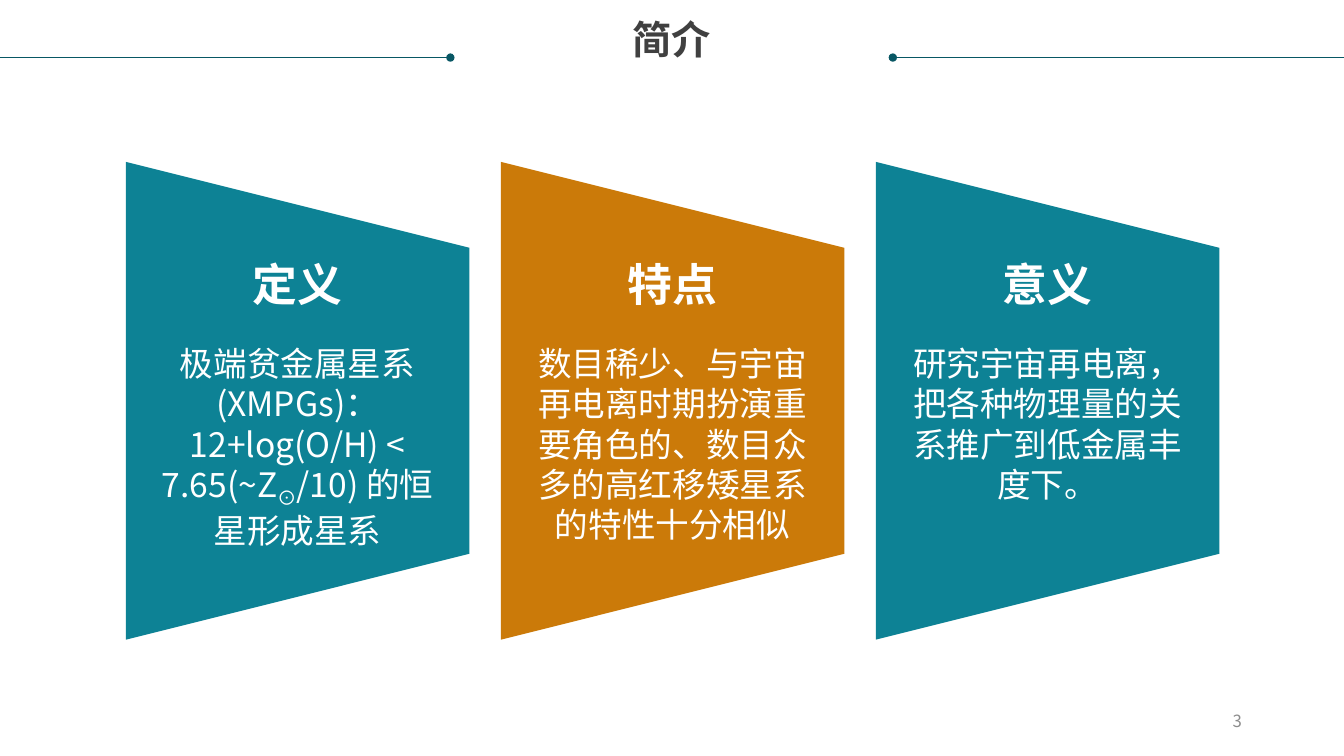
"""Build the three-column introduction slide on extremely metal-poor galaxies."""
from dataclasses import dataclass

from lxml.etree import SubElement
from pptx import Presentation
from pptx.dml.color import RGBColor
from pptx.enum.shapes import MSO_CONNECTOR, MSO_SHAPE
from pptx.enum.text import MSO_ANCHOR, PP_ALIGN
from pptx.oxml.ns import qn
from pptx.util import Cm, Pt

FONT = "Noto Sans CJK SC"
TEAL, ORANGE, DARK_TEAL = "0D8295", "CB7A09", "085764"
WHITE, TITLE_GREY, NUMBER_GREY = "FFFFFF", "404040", "8C8C8C"
SLIDE_W, SLIDE_H = 33.87, 19.05
RULE_Y = 1.45
FIRST_CENTER, PITCH = 7.5, 9.45
PANEL_LENGTH, PANEL_WIDTH, PANEL_TOP = 12.04, 8.66, 5.77
HEADING_W, BODY_W = 5.82, 7.42


@dataclass(frozen=True)
class Box:
    left: float
    top: float
    width: float
    height: float

    def lengths(self) -> tuple:
        return Cm(self.left), Cm(self.top), Cm(self.width), Cm(self.height)


@dataclass(frozen=True)
class TextStyle:
    size: int
    color: str = WHITE
    bold: bool = False
    align: PP_ALIGN = PP_ALIGN.CENTER
    spacing: float = 1.0


@dataclass(frozen=True)
class Panel:
    heading: str
    body: tuple[tuple[str, ...], ...]
    color: str


@dataclass(frozen=True)
class Rule:
    start: float
    end: float
    dot: str


TITLE = TextStyle(28, TITLE_GREY, True, spacing=0.9)
HEADING = TextStyle(32, bold=True)
BODY = TextStyle(24)
NUMBER = TextStyle(12, NUMBER_GREY, align=PP_ALIGN.RIGHT)
SUBSCRIPT = "⊙"

PANELS = (
    Panel("定义", (("极端贫金属星系(XMPGs)：12+log(O/H) < 7.65(~Z", SUBSCRIPT,
                  "/10) 的恒星形成星系"),), TEAL),
    Panel("特点", (("数目稀少、与宇宙再电离时期扮演重要角色的、"
                  "数目众多的高红移矮星系的特性十分相似",),), ORANGE),
    Panel("意义", (("研究宇宙再电离，",),
                 ("把各种物理量的关系推广到低金属丰度下。",)), TEAL),
)
RULES = (Rule(0, 11.35, "a:tailEnd"), Rule(22.5, SLIDE_W, "a:headEnd"))


def rgb(value: str) -> RGBColor:
    return RGBColor.from_string(value)


def add_text(shapes, box: Box, paragraphs: tuple, style: TextStyle, inset: bool = False):
    tf = shapes.add_textbox(*box.lengths()).text_frame
    tf.word_wrap = True
    if not inset:
        tf.margin_left = tf.margin_top = tf.margin_right = tf.margin_bottom = 0
    for i, runs in enumerate(paragraphs):
        p = tf.paragraphs[0] if i == 0 else tf.add_paragraph()
        p.alignment = style.align
        p.line_spacing = style.spacing
        for text in runs:
            r = p.add_run()
            r.text = text
            r.font.size = Pt(style.size)
            r.font.bold = style.bold
            r.font.color.rgb = rgb(style.color)
            r.font.name = FONT
            props = r.font._element
            SubElement(props, qn("a:ea"), typeface=FONT)
            if text == SUBSCRIPT:
                props.set("baseline", "-25000")
    return tf


def add_rule(shapes, rule: Rule) -> None:
    c = shapes.add_connector(MSO_CONNECTOR.STRAIGHT, Cm(rule.start), Cm(RULE_Y),
                             Cm(rule.end), Cm(RULE_Y))
    c.line.color.rgb = rgb(DARK_TEAL)
    c.line.width = Pt(0.5)
    SubElement(c.line._get_or_add_ln(), qn(rule.dot), type="oval")
    SubElement(c._element.spPr, qn("a:effectLst"))


def add_panel(shapes, panel: Panel, center: float) -> None:
    group = shapes.add_group_shape().shapes
    box = Box(center - PANEL_LENGTH / 2, PANEL_TOP, PANEL_LENGTH, PANEL_WIDTH)
    sp = group.add_shape(MSO_SHAPE.TRAPEZOID, *box.lengths())
    sp.rotation = 90
    sp.shadow.inherit = False
    sp.fill.solid()
    sp.fill.fore_color.rgb = rgb(panel.color)
    sp.line.fill.background()
    add_text(group, Box(center - HEADING_W / 2, 6.48, HEADING_W, 1.37),
             ((panel.heading,),), HEADING)
    add_text(group, Box(center - BODY_W / 2, 8.64, BODY_W, 5.13), panel.body, BODY)


def main() -> None:
    prs = Presentation()
    prs.slide_width, prs.slide_height = Cm(SLIDE_W), Cm(SLIDE_H)
    s = prs.slides.add_slide(prs.slide_layouts[6])
    for rule in RULES:
        add_rule(s.shapes, rule)
    add_text(s.shapes, Box(0.64, 0.53, 32.59, 2.16), (("简介",),), TITLE)
    for i, panel in enumerate(PANELS):
        add_panel(s.shapes, panel, FIRST_CENTER + i * PITCH)
    tf = add_text(s.shapes, Box(23.93, 17.65, 7.62, 1.02), (("3",),), NUMBER, inset=True)
    tf.vertical_anchor = MSO_ANCHOR.MIDDLE
    prs.save("out.pptx")


if __name__ == "__main__":
    main()
